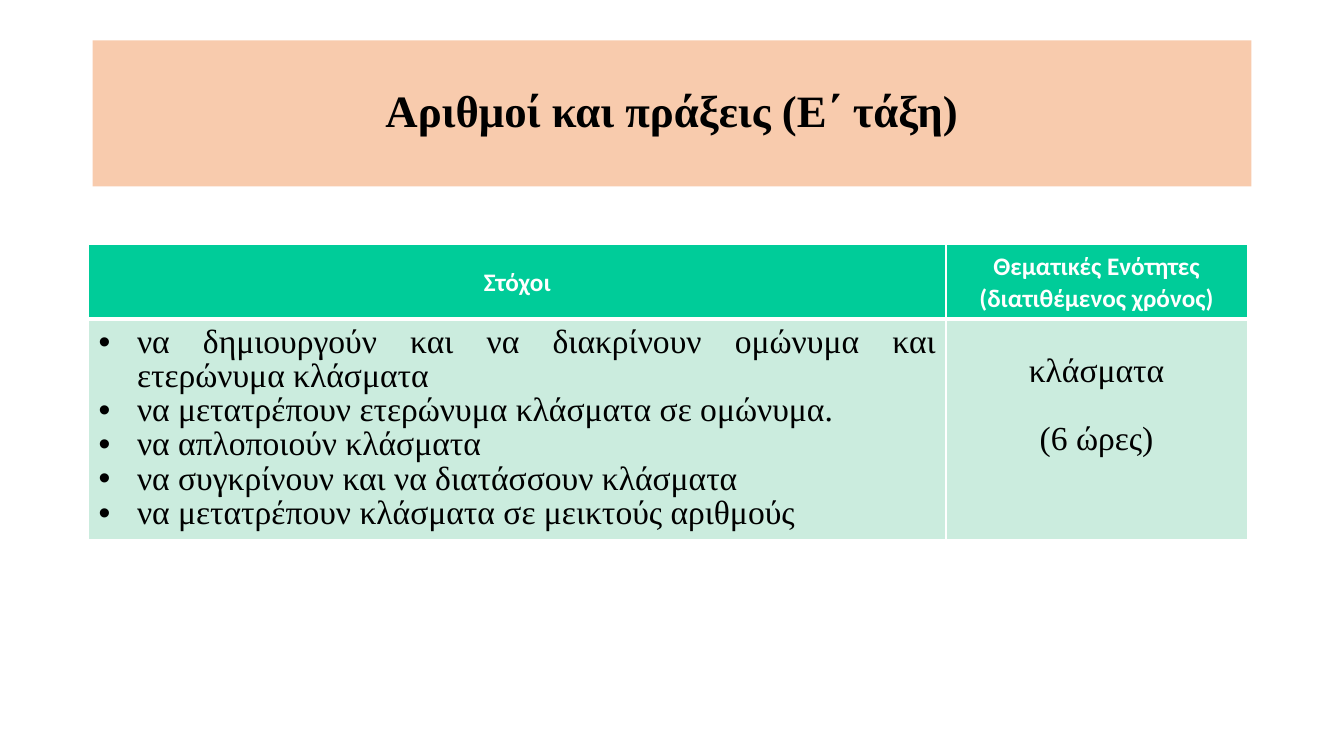
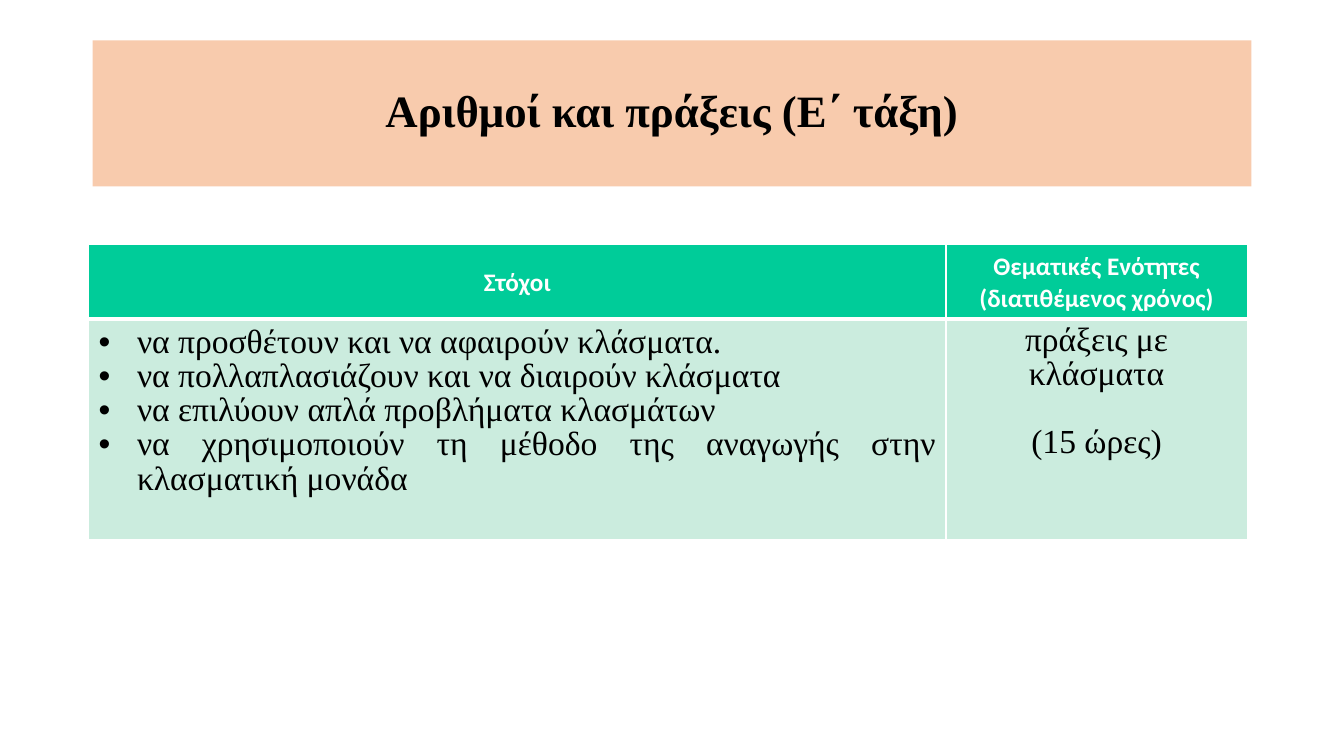
from dataclasses import dataclass

from lxml.etree import SubElement
from pptx import Presentation
from pptx.dml.color import RGBColor
from pptx.enum.text import MSO_ANCHOR, MSO_AUTO_SIZE, PP_ALIGN
from pptx.oxml.ns import qn
from pptx.slide import Slide
from pptx.table import _Cell
from pptx.text.text import TextFrame
from pptx.util import Inches, Pt

PEACH, GREEN, MINT = "F8CBAD", "00CC99", "CBECDE"
BLACK, WHITE = "000000", "FFFFFF"
SERIF, SANS = "Times New Roman", "Calibri"
TITLE = "Αριθμοί και πράξεις (Ε΄ τάξη)"
HEADS = (["Στόχοι"], ["Θεματικές Ενότητες", "(διατιθέμενος χρόνος)"])
COLS, ROWS = (8.51, 2.99), (0.73, 2.19)
THIN, THICK = 0.91, 2.95


@dataclass
class Unit:
    goals: list[str]
    topic: str
    hours: str
    top: float  # inset above the topic, in inches


UNITS = [
    Unit(["να δημιουργούν και να διακρίνουν ομώνυμα και ετερώνυμα κλάσματα",
          "να μετατρέπουν ετερώνυμα κλάσματα σε ομώνυμα.",
          "να απλοποιούν κλάσματα",
          "να συγκρίνουν και να διατάσσουν κλάσματα",
          "να μετατρέπουν κλάσματα σε μεικτούς αριθμούς"],
         "κλάσματα", "(6 ώρες)", 0.36),
    Unit(["να προσθέτουν και να αφαιρούν κλάσματα.",
          "να πολλαπλασιάζουν και να διαιρούν κλάσματα",
          "να επιλύουν απλά προβλήματα κλασμάτων",
          "να χρησιμοποιούν τη μέθοδο της αναγωγής στην κλασματική μονάδα"],
         "πράξεις με κλάσματα", "(15 ώρες)", 0.05),
]


def paint(item, color: str) -> None:
    """Give a shape or a cell a solid fill."""
    item.fill.solid()
    item.fill.fore_color.rgb = RGBColor.from_string(color)


def write(frame: TextFrame, lines: list[str], *, size: float = 24, font: str = SERIF,
          color: str = BLACK, bold: bool = False, align: PP_ALIGN = PP_ALIGN.CENTER,
          pitch: float = 0.92, gap: float = 0, bullet: bool = False) -> None:
    """Fill a frame, one paragraph a line, with gap points between them."""
    for i, line in enumerate(lines):
        para = frame.add_paragraph() if i else frame.paragraphs[0]
        para.alignment, para.line_spacing = align, pitch
        para.space_before = Pt(gap if i else 0)
        run = para.add_run()
        run.text = line
        run.font.size, run.font.name, run.font.bold = Pt(size), font, bold
        run.font.color.rgb = RGBColor.from_string(color)
        if bullet:
            props = para._p.get_or_add_pPr()
            props.set("marL", str(Inches(0.38)))
            props.set("indent", str(-Inches(0.38)))
            SubElement(props, qn("a:buFont")).set("typeface", "Arial")
            SubElement(props, qn("a:buChar")).set("char", "•")


def style(cell: _Cell, color: str, top: float, above: float, below: float) -> None:
    """Set the top inset, white borders and fill of a cell."""
    cell.margin_top = Inches(top)
    props = cell._tc.get_or_add_tcPr()
    for side, width in zip("LRTB", (THIN, THIN, above, below)):
        line = SubElement(props, qn(f"a:ln{side}"))
        line.set("w", str(Pt(width)))
        SubElement(SubElement(line, qn("a:solidFill")), qn("a:srgbClr")).set("val", WHITE)
    paint(cell, color)


def add_title(slide: Slide) -> None:
    title = slide.shapes.title
    title.left, title.top = Inches(0.92), Inches(0.4)
    title.width, title.height = Inches(11.5), Inches(1.45)
    paint(title, PEACH)
    frame = title.text_frame
    frame.auto_size, frame.vertical_anchor = MSO_AUTO_SIZE.NONE, MSO_ANCHOR.MIDDLE
    write(frame, [TITLE], size=32, bold=True, pitch=0.9)


def add_goals(slide: Slide, unit: Unit) -> None:
    table = slide.shapes.add_table(2, 2, Inches(0.88), Inches(2.43),
                                   Inches(sum(COLS)), Inches(sum(ROWS))).table
    for col, width in zip(table.columns, COLS):
        col.width = Inches(width)
    for row, height in zip(table.rows, ROWS):
        row.height = Inches(height)

    for i, head in enumerate(HEADS):
        cell = table.cell(0, i)
        style(cell, GREEN, 0.05, THIN, THICK)
        cell.vertical_anchor = MSO_ANCHOR.MIDDLE
        write(cell.text_frame, head, size=18, font=SANS, color=WHITE, bold=True, pitch=1.04)

    goals, topic = table.cell(1, 0), table.cell(1, 1)
    style(goals, MINT, 0.07, THICK, THIN)
    write(goals.text_frame, unit.goals, align=PP_ALIGN.JUSTIFY, bullet=True)
    style(topic, MINT, unit.top, THICK, THIN)
    write(topic.text_frame, [unit.topic, unit.hours], gap=24)


def main() -> None:
    deck = Presentation()
    deck.slide_width, deck.slide_height = Inches(13.34), Inches(7.5)
    for unit in UNITS:
        slide = deck.slides.add_slide(deck.slide_layouts[5])
        add_title(slide)
        add_goals(slide, unit)
    deck.save("out.pptx")


if __name__ == "__main__":
    main()
